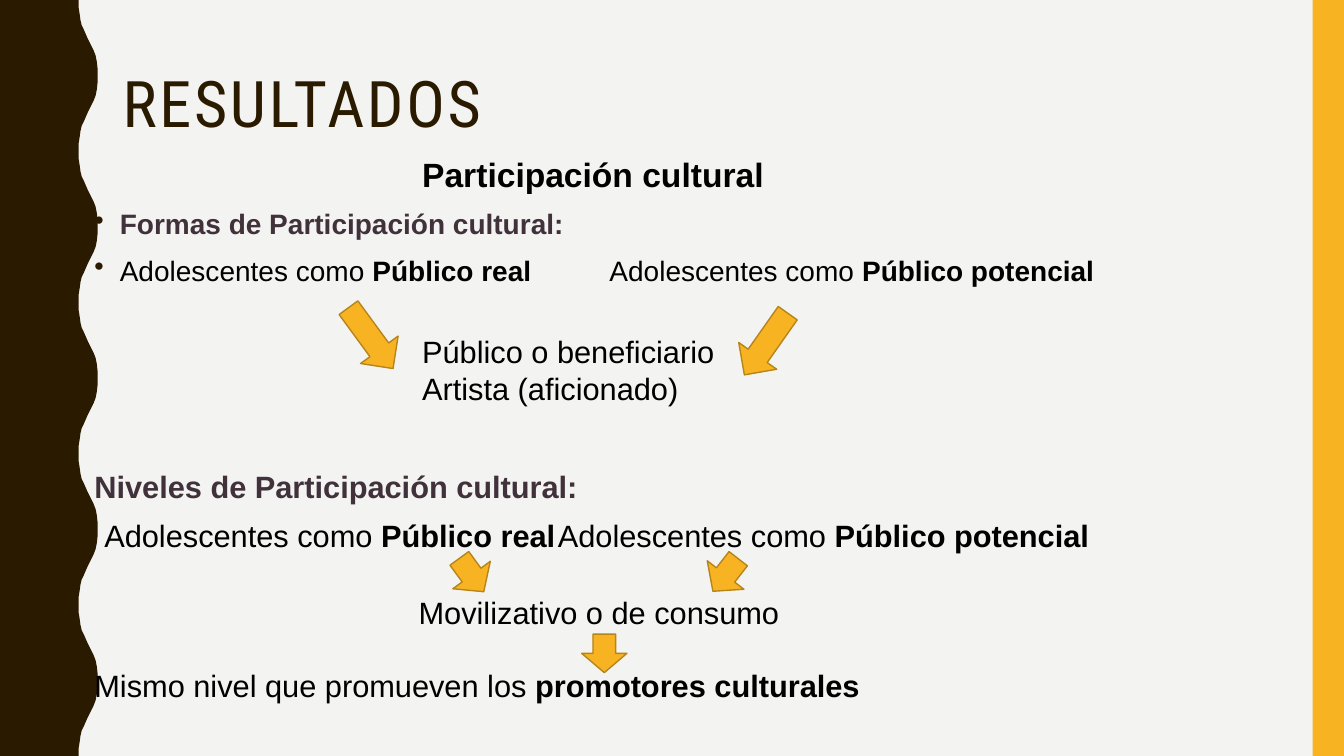
from pptx import Presentation
from pptx.dml.color import RGBColor
from pptx.enum.shapes import MSO_SHAPE
from pptx.enum.text import MSO_ANCHOR, MSO_AUTO_SIZE
from pptx.oxml import parse_xml
from pptx.oxml.ns import nsdecls
from pptx.util import Cm, Pt

RECTANGLE, DOWN_ARROW = MSO_SHAPE.RECTANGLE, MSO_SHAPE.DOWN_ARROW
TOP, MIDDLE = MSO_ANCHOR.TOP, MSO_ANCHOR.MIDDLE
GROW, FIXED = MSO_AUTO_SIZE.SHAPE_TO_FIT_TEXT, MSO_AUTO_SIZE.NONE

PAPER = RGBColor(0xF3, 0xF3, 0xF2)
BROWN = RGBColor(0x2A, 0x1A, 0x00)
AMBER = RGBColor(0xF8, 0xB3, 0x23)
AMBER_EDGE = RGBColor(0xB7, 0x84, 0x1A)
PLUM = RGBColor(0x41, 0x31, 0x3B)
BLACK = RGBColor(0x00, 0x00, 0x00)

WIDTH, HEIGHT = 33.87, 19.05
WAVE_PERIOD = 3.81
# Half a wave as (x, y) in cm; the other half is its mirror
HALF_WAVE = [(1.98, 0), (1.98, 0.18), (2.01, 0.36), (2.03, 0.51), (2.06, 0.64),
             (2.11, 0.74), (2.21, 0.97), (2.31, 1.17), (2.36, 1.27),
             (2.41, 1.4), (2.44, 1.55), (2.46, 1.73), (2.46, 1.9)]

AUDIENCES = [("Adolescentes como ", False), ("Público real", True),
             ("\tAdolescentes como ", False), ("Público potencial", True)]


def paint(shape, color, edge=None):
    shape.shadow.inherit = False
    shape.fill.solid()
    shape.fill.fore_color.rgb = color
    if edge is None:
        shape.line.fill.background()
    else:
        shape.line.color.rgb = edge
        shape.line.width = Pt(1)


def add_text(slide, box, lines, size, font="Arial", anchor=TOP, fit=GROW):
    """Each line is (runs, color, layout); runs are (text, bold)."""
    shape = slide.shapes.add_textbox(*map(Cm, box))
    frame = shape.text_frame
    frame.word_wrap = True
    frame.auto_size = fit
    frame.vertical_anchor = anchor
    for number, (runs, color, layout) in enumerate(lines):
        paragraph = frame.paragraphs[0] if number == 0 else frame.add_paragraph()
        properties = paragraph._p.get_or_add_pPr()
        left = Cm(layout.get("left", 0))
        properties.set("marL", str(left))
        properties.set("indent", str(-left if "bullet" in layout else 0))
        if "bullet" in layout:
            properties.append(parse_xml(
                f'<a:buClr {nsdecls("a")}><a:srgbClr val="{BROWN}"/></a:buClr>'))
            properties.append(parse_xml(
                f'<a:buChar {nsdecls("a")} char="{layout["bullet"]}"/>'))
        if "tab" in layout:
            properties.append(parse_xml(
                f'<a:tabLst {nsdecls("a")}>'
                f'<a:tab pos="{Cm(layout["tab"])}" algn="l"/></a:tabLst>'))
        for name, value in layout.get("spacing", {}).items():
            setattr(paragraph, name, value)
        for text, bold in runs:
            run = paragraph.add_run()
            run.text = text
            style = {"name": font, "size": Pt(size), "bold": bold}
            for name, value in style.items():
                setattr(run.font, name, value)
            run.font.color.rgb = color
    return shape


def add_arrows(slide, left, top, arrows):
    for x, y, width, height, rotation in arrows:
        arrow = slide.shapes.add_shape(
            DOWN_ARROW, Cm(left + x), Cm(top + y), Cm(width), Cm(height))
        arrow.rotation = rotation
        paint(arrow, AMBER, AMBER_EDGE)


def add_frame(slide, left, top, width, height):
    # Wavy band on the left
    points = [(left, top)]
    for wave in range(round(height / WAVE_PERIOD)):
        start = top + wave * WAVE_PERIOD
        points += [(left + x, start + y) for x, y in HALF_WAVE]
        points += [(left + x, start + WAVE_PERIOD - y)
                   for x, y in reversed(HALF_WAVE[:-1])]
    points.append((left, top + height))
    corners = [(Cm(x), Cm(y)) for x, y in points]
    builder = slide.shapes.build_freeform(*corners[0], scale=1.0)
    builder.add_line_segments(corners[1:], close=True)
    paint(builder.convert_to_shape(), BROWN)

    # Straight band on the right
    band = 0.79
    stripe = slide.shapes.add_shape(
        RECTANGLE, Cm(left + width - band), Cm(top), Cm(band), Cm(height))
    paint(stripe, AMBER)


def add_heading(slide, left, top, width, height):
    title = add_text(
        slide, (left, top, width, height),
        [([("RESULTADOS", False)], BROWN, {"spacing": {"line_spacing": 0.9}})],
        45.9, "Roboto Condensed", MIDDLE, FIXED)
    run = title.text_frame.paragraphs[0].runs[0]
    run.font._element.set("spc", "200")
    add_text(slide, (left + 7.55, top + height, 13.61, 1.27),
             [([("Participación cultural", True)], BLACK, {})], 24)


def add_forms(slide, left, top, width, height):
    bullet = {"left": 0.64, "bullet": "•"}
    first = {**bullet, "spacing": {"line_spacing": 1.1}}
    second = {**bullet, "tab": 12.98,
              "spacing": {"line_spacing": 1.1, "space_before": Pt(7)}}
    add_text(slide, (left, top, width, height),
             [([("Formas de Participación cultural:", True)], PLUM, first),
              (AUDIENCES, BLACK, second)], 20, fit=FIXED)
    add_text(slide, (left + 8.26, top + 3.26, 8.15, 2.13),
             [([(text, False)], BLACK, {})
              for text in ("Público o beneficiario", "Artista (aficionado)")], 22)
    add_arrows(slide, left, top, [(6.63, 2.57, 1.17, 1.9, 323.8),
                                  (16.59, 2.72, 1.17, 1.9, 35.1)])


def add_levels(slide, left, top, width, height):
    audience = {"left": 0.25, "tab": 13.77,
                "spacing": {"line_spacing": 0.9, "space_before": Pt(12),
                            "space_after": Pt(2)}}
    gap = {"space_before": Pt(26)}
    add_text(slide, (left, top, width, height),
             [([("Niveles de Participación cultural:", True)], PLUM, {}),
              (AUDIENCES, BLACK, audience),
              ([("Movilizativo o de consumo", False)], BLACK,
               {"left": 8.17, "spacing": gap}),
              ([("Mismo nivel que promueven los ", False),
                ("promotores culturales", True)], BLACK, {"spacing": gap})], 22)
    add_arrows(slide, left, top, [(9.17, 2.31, 1.17, 1.04, 323.8),
                                  (15.57, 2.31, 1.17, 1.04, 37.9),
                                  (12.53, 4.32, 1.14, 0.97, 0)])


def main():
    presentation = Presentation()
    presentation.slide_width, presentation.slide_height = Cm(WIDTH), Cm(HEIGHT)
    slide = presentation.slides.add_slide(presentation.slide_layouts[6])
    slide.background.fill.solid()
    slide.background.fill.fore_color.rgb = PAPER

    add_frame(slide, 0, 0, WIDTH, HEIGHT)
    add_heading(slide, 2.84, 1.63, 27, 2.13)
    add_forms(slide, 2.13, 5, 29.59, 12.52)
    add_levels(slide, 2.13, 11.66, 28.58, 6.3)
    presentation.save("out.pptx")


if __name__ == "__main__":
    main()
